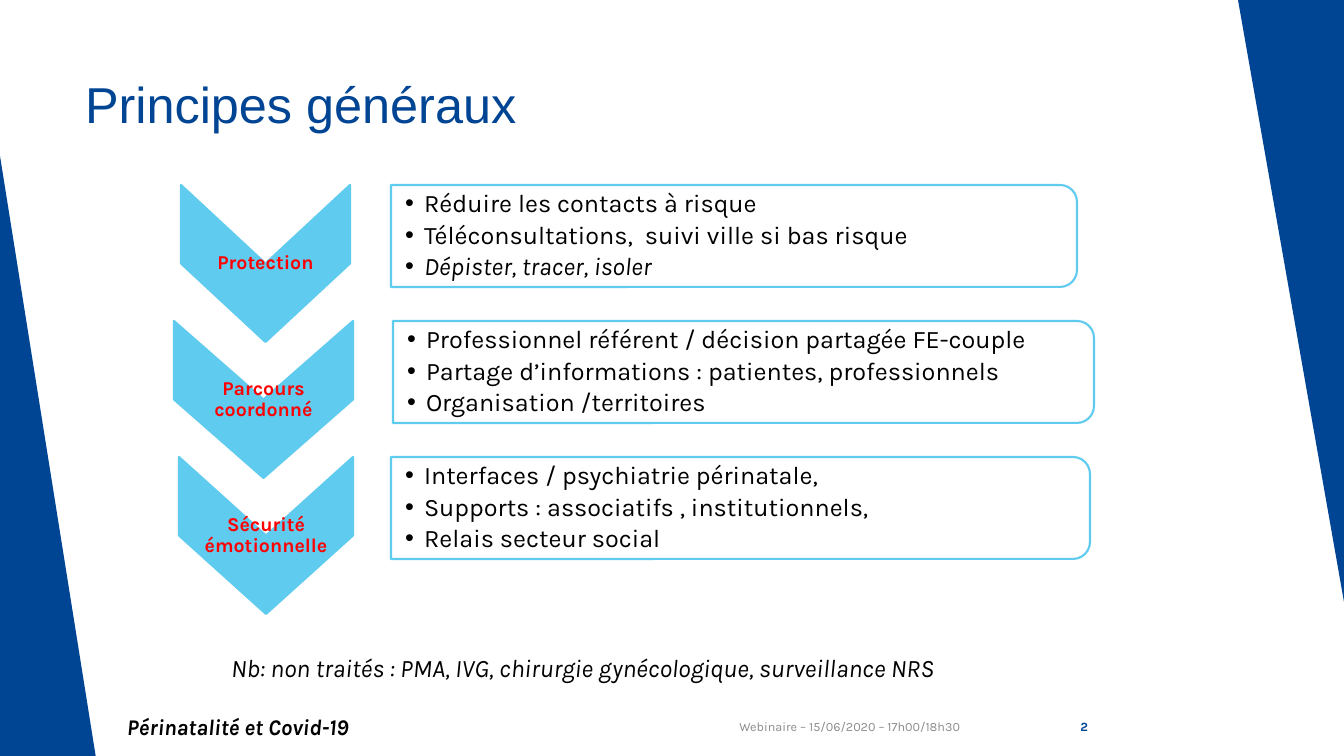
from lxml import etree
from pptx import Presentation
from pptx.dml.color import RGBColor
from pptx.enum.shapes import MSO_SHAPE
from pptx.enum.text import MSO_ANCHOR, MSO_AUTO_SIZE, PP_ALIGN
from pptx.oxml.ns import qn
from pptx.util import Pt

TRI = MSO_SHAPE.RIGHT_TRIANGLE
CHEVRON = MSO_SHAPE.CHEVRON
PANEL = MSO_SHAPE.ROUND_2_SAME_RECTANGLE
TOP, MIDDLE = MSO_ANCHOR.TOP, MSO_ANCHOR.MIDDLE
LEFT, MID, RIGHT = PP_ALIGN.LEFT, PP_ALIGN.CENTER, PP_ALIGN.RIGHT
FIXED = MSO_AUTO_SIZE.NONE

NAVY = RGBColor(0x00, 0x44, 0x94)
SKY = RGBColor(0x5F, 0xCB, 0xEF)
RED = RGBColor(0xFF, 0x00, 0x00)
GREY = RGBColor(0x8C, 0x8C, 0x8C)
BLACK = RGBColor(0x00, 0x00, 0x00)
WHITE = RGBColor(0xFF, 0xFF, 0xFF)
PX = 12192000 / 1344


def px(n):
    return round(n * PX)


def write(box, area, lines, size, color, align=LEFT, anchor=MIDDLE,
          bold=False, font="Karla", pads=(10, 5, 10, 5), space=1, after=0,
          bullet=False):
    box.left, box.top, box.width, box.height = map(px, area)
    frame = box.text_frame
    frame.word_wrap = True
    frame.auto_size = FIXED
    frame.vertical_anchor = anchor
    (frame.margin_left, frame.margin_top,
     frame.margin_right, frame.margin_bottom) = map(px, pads)
    for n, (text, slant) in enumerate(lines):
        para = frame.add_paragraph() if n else frame.paragraphs[0]
        if bullet:
            props = para._p.get_or_add_pPr()
            props.set("marL", str(px(19)))
            props.set("indent", str(px(-19)))
            etree.SubElement(props, qn("a:buFont")).set("typeface", "Arial")
            etree.SubElement(props, qn("a:buChar")).set("char", "•")
        para.alignment = align
        para.line_spacing = space
        para.space_before = Pt(0)
        para.space_after = Pt(after)
        run = para.add_run()
        run.text = text
        run.font.name = font
        run.font.size = Pt(size)
        run.font.bold = bold
        run.font.italic = slant
        run.font.color.rgb = color


deck = Presentation()
deck.slide_width, deck.slide_height = px(1344), px(756)
slide = deck.slides.add_slide(deck.slide_layouts[4])
shapes = slide.shapes
holders = slide.placeholders

for area, turn in [((0, 156, 96, 602), 0), ((1238, 0, 106, 602), 180)]:
    edge = shapes.add_shape(TRI, *map(px, area))
    edge.rotation = turn
    edge.shadow.inherit = False
    edge.fill.solid()
    edge.fill.fore_color.rgb = NAVY
    edge.line.fill.background()

write(shapes.title, (75, 68, 948, 145), [("Principes généraux", False)],
      36, NAVY, anchor=TOP, font="Arial")

rows = [
    ("Protection", 181, 169, 391, 686, [
        ("Réduire les contacts à risque", False),
        ("Téléconsultations,  suivi ville si bas risque", False),
        ("Dépister, tracer, isoler", True)]),
    ("Parcours coordonné", 174, 179, 393, 701, [
        ("Professionnel référent / décision partagée FE-couple", False),
        ("Partage d’informations : patientes, professionnels", False),
        ("Organisation /territoires", False)]),
    ("Sécurité émotionnelle", 179, 174, 391, 699, [
        ("Interfaces / psychiatrie périnatale,", False),
        ("Supports : associatifs , institutionnels,", False),
        ("Relais secteur social", False)]),
]
for n, (label, tipx, tipw, listx, listw, items) in enumerate(rows):
    top = 185 + 136 * n
    for kind, x, wide, high, fill in [(CHEVRON, tipx, tipw, 157, SKY),
                                      (PANEL, listx, listw, 102, WHITE)]:
        part = shapes.add_shape(kind, px(x + (wide - high) / 2),
                                px(top + (high - wide) / 2),
                                px(high), px(wide))
        part.rotation = 90
        part.shadow.inherit = False
        part.fill.solid()
        part.fill.fore_color.rgb = fill
        part.line.color.rgb = SKY
        part.line.width = Pt(1.5)

    body = holders[n + 1]
    part.element.addnext(body.element)
    write(body, (listx, top + 5, listw - 5, 92), items, 18, BLACK,
          pads=(14, 1, 1, 1), space=0.9, after=3, bullet=True)
    write(shapes.add_textbox(0, 0, 0, 0), (tipx, top, tipw, 157),
          [(label, False)], 14, RED, align=MID, bold=True,
          pads=(1, 1, 1, 1), space=0.9)

spare = holders[4].element
spare.getparent().remove(spare)

notes = [
    ("Webinaire – 15/06/2020 – 17h00/18h30", (708, 707, 262, 40),
     9, GREY, RIGHT, False, False),
    ("Périnatalité et Covid-19", (117, 707, 539, 40),
     16, BLACK, LEFT, True, True),
    ("2", (1022, 707, 76, 40), 9, NAVY, RIGHT, True, False),
    ("Nb: non traités : PMA, IVG, chirurgie gynécologique, surveillance NRS",
     (221, 647, 827, 40), 18, BLACK, LEFT, False, True),
]
for text, area, size, color, align, bold, slant in notes:
    write(shapes.add_textbox(0, 0, 0, 0), area, [(text, slant)],
          size, color, align=align, bold=bold)

deck.save("out.pptx")
